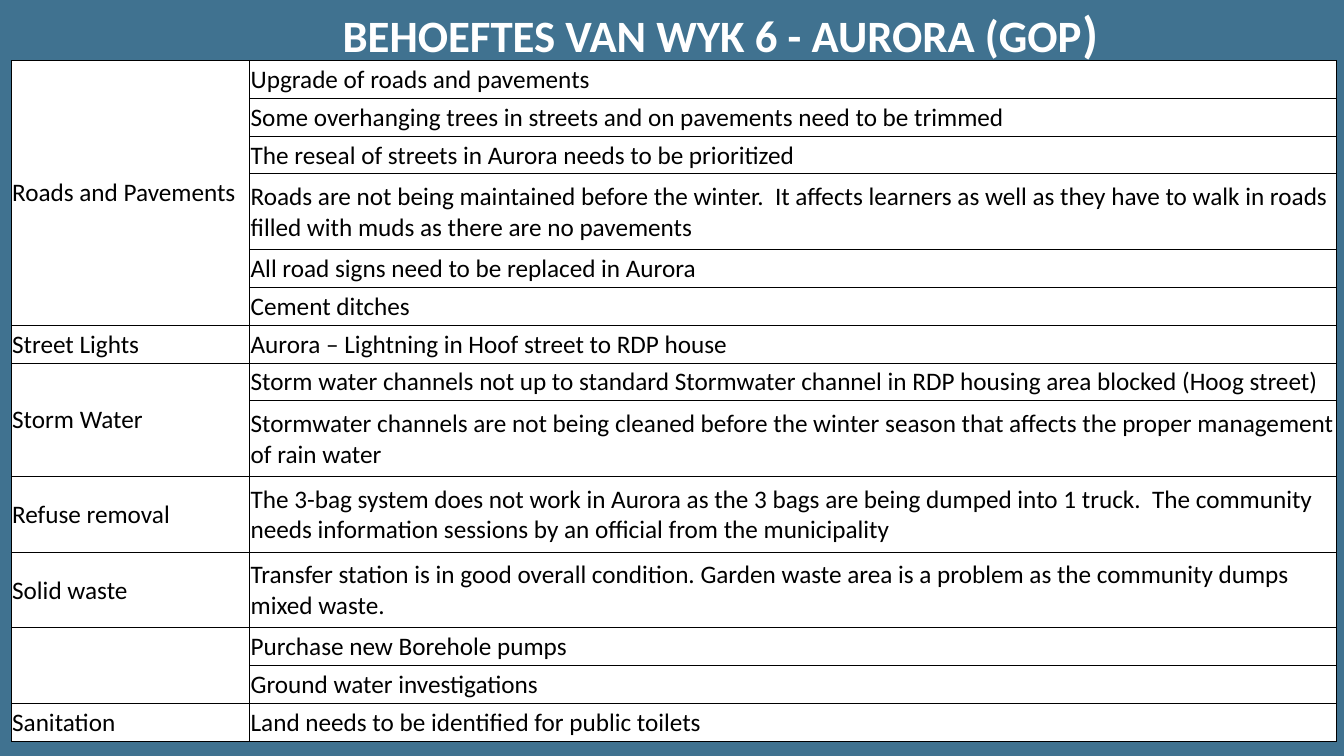
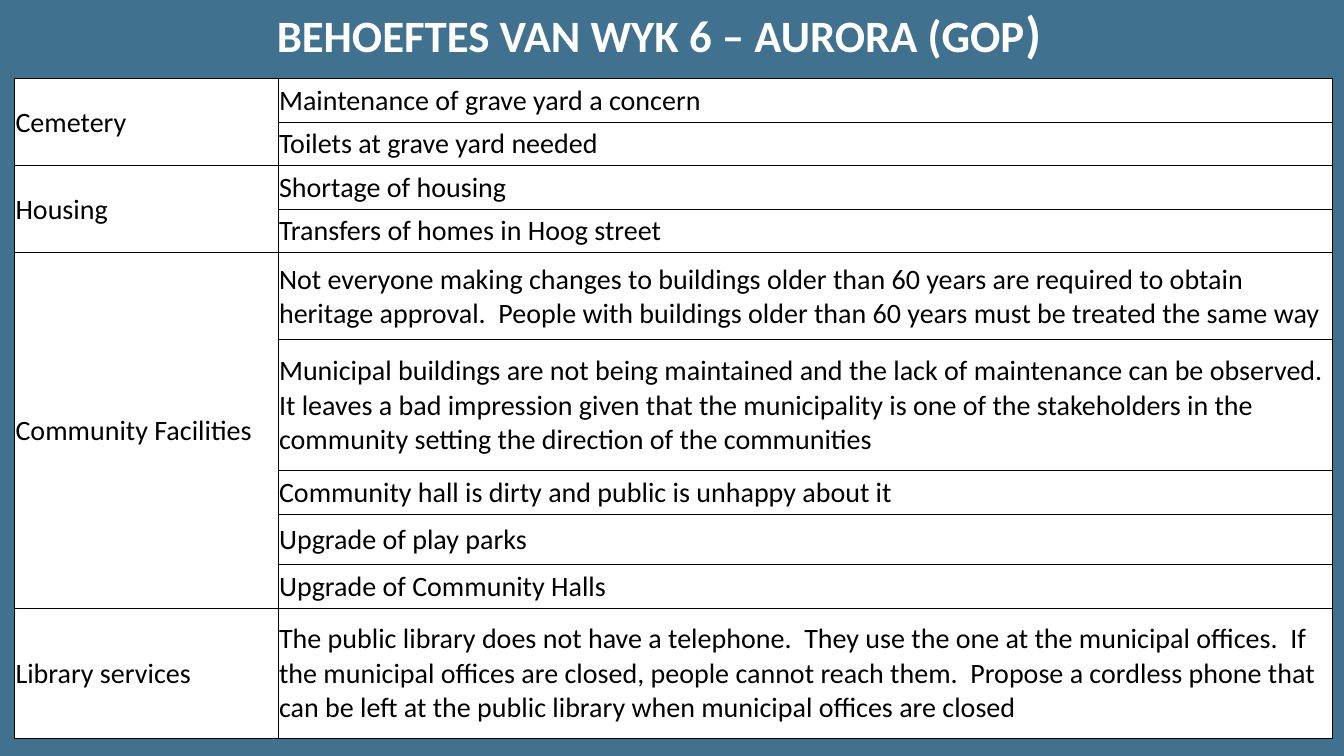
from pptx import Presentation
from pptx.dml.color import RGBColor
from pptx.enum.text import MSO_ANCHOR as Anchor, MSO_AUTO_SIZE as AutoSize, PP_ALIGN as Align
from pptx.oxml import parse_xml
from pptx.oxml.ns import nsdecls
from pptx.util import Inches, Pt

BACK, WHITE, BLACK = "407290", "FFFFFF", "000000"
FONT = "Calibri"
BORDER = (
    '<a:{side} {ns} w="6350"><a:solidFill><a:srgbClr val="{color}"/></a:solidFill></a:{side}>'
)


def rgb(value):
    return RGBColor.from_string(value)


def style(font, color, bold=False):
    font.name, font.bold = FONT, bold
    font.color.rgb = rgb(color)


# Content: each group is (heading, [(need, height in lines), ...]);
# title and table boxes are percentages of the slide's width and height
slides = [
    dict(
        title="BEHOEFTES VAN WYK 6 - AURORA (GOP",
        title_box=(23.03, 61.14),
        table_box=(0.83, 7.98, 98.6, 90.13),
        heading_share=0.18,
        size=18,
        groups=[
            ("Roads and Pavements", [
                ("Upgrade of roads and pavements", 1),
                ("Some overhanging trees in streets and on pavements need to be trimmed", 1),
                ("The reseal of streets in Aurora needs to be prioritized", 1),
                ("Roads are not being maintained before the winter.  It affects learners as well "
                 "as they have to walk in roads filled with muds as there are no pavements", 2),
                ("All road signs need to be replaced in Aurora", 1),
                ("Cement ditches", 1),
            ]),
            ("Street Lights", [("Aurora – Lightning in Hoof street to RDP house", 1)]),
            ("Storm Water", [
                ("Storm water channels not up to standard Stormwater channel in RDP housing "
                 "area blocked (Hoog street)", 1),
                ("Stormwater channels are not being cleaned before the winter season that "
                 "affects the proper management of rain water", 2),
            ]),
            ("Refuse removal", [
                ("The 3-bag system does not work in Aurora as the 3 bags are being dumped into "
                 "1 truck.  The community needs information sessions by an official from the "
                 "municipality", 2),
            ]),
            ("Solid waste", [
                ("Transfer station is in good overall condition. Garden waste area is a problem "
                 "as the community dumps mixed waste.", 2),
            ]),
            ("", [("Purchase new Borehole pumps", 1), ("Ground water investigations", 1)]),
            ("Sanitation", [("Land needs to be identified for public toilets", 1)]),
        ],
    ),
    dict(
        title="BEHOEFTES VAN WYK 6 – AURORA (GOP",
        title_box=(0, 98.05),
        table_box=(1.08, 10.38, 98.05, 87.33),
        heading_share=0.2,
        size=20,
        groups=[
            ("Cemetery", [
                ("Maintenance of grave yard a concern", 1),
                ("Toilets at grave yard needed", 1),
            ]),
            ("Housing", [
                ("Shortage of housing", 1),
                ("Transfers of homes in Hoog street", 1),
            ]),
            ("Community Facilities", [
                ("Not everyone making changes to buildings older than 60 years are required to "
                 "obtain heritage approval.  People with buildings older than 60 years must be "
                 "treated the same way", 2),
                ("Municipal buildings are not being maintained and the lack of maintenance can "
                 "be observed.  It leaves a bad impression given that the municipality is one of "
                 "the stakeholders in the community setting the direction of the communities", 3),
                ("Community hall is dirty and public is unhappy about it", 1),
                ("Upgrade of play parks", 1.16),
                ("Upgrade of Community Halls", 1),
            ]),
            ("Library services", [
                ("The public library does not have a telephone.  They use the one at the "
                 "municipal offices.  If the municipal offices are closed, people cannot reach "
                 "them.  Propose a cordless phone that can be left at the public library when "
                 "municipal offices are closed", 3),
            ]),
        ],
    ),
]

# Shared page and background
prs = Presentation()
prs.slide_width, prs.slide_height = Inches(13.33), Inches(7.5)
col, row = prs.slide_width / 100, prs.slide_height / 100
fill = prs.slide_master.background.fill
fill.solid()
fill.fore_color.rgb = rgb(BACK)

for page in slides:
    s = prs.slides.add_slide(prs.slide_layouts[5])

    # Title, with a larger closing bracket, kept clear of the table
    sp = s.shapes.title
    left, width = page["title_box"]
    sp.left, sp.top = int(left * col), 0
    sp.width, sp.height = int(width * col), int(8.6 * row)
    tf = sp.text_frame
    tf.auto_size, tf.word_wrap, tf.vertical_anchor = AutoSize.NONE, True, Anchor.MIDDLE
    tf.margin_top = tf.margin_bottom = 0
    p = tf.paragraphs[0]
    p.alignment = Align.CENTER
    style(p.font, WHITE, bold=True)
    for text, size in ((page["title"], 32), (")", 36)):
        r = p.add_run()
        r.text, r.font.size = text, Pt(size)

    # Table grid: row heights follow the line counts
    needs = [need for _, group in page["groups"] for need in group]
    left, top, width, height = page["table_box"]
    width, height = int(width * col), int(height * row)
    table = s.shapes.add_table(
        len(needs), 2, int(left * col), int(top * row), width, height).table
    table.first_row = table.horz_banding = False
    table.columns[0].width = int(width * page["heading_share"])
    table.columns[1].width = width - table.columns[0].width
    line = height / sum(lines for _, lines in needs)
    for i, (text, lines) in enumerate(needs):
        table.rows[i].height = int(lines * line)
        table.cell(i, 1).text = text

    # Headings span the rows of their group
    first = 0
    for heading, group in page["groups"]:
        cell = table.cell(first, 0)
        cell.text = heading
        if len(group) > 1:
            cell.merge(table.cell(first + len(group) - 1, 0))
        first += len(group)

    # Cell borders, fill and text
    for cell in table.iter_cells():
        cell.vertical_anchor = Anchor.MIDDLE
        cell.margin_left = cell.margin_right = cell.margin_top = Inches(0.01)
        cell.margin_bottom = 0
        tc_pr = cell._tc.get_or_add_tcPr()
        for side in ("lnL", "lnR", "lnT", "lnB"):
            tc_pr.append(parse_xml(BORDER.format(side=side, ns=nsdecls("a"), color=BLACK)))
        cell.fill.solid()
        cell.fill.fore_color.rgb = rgb(WHITE)
        p = cell.text_frame.paragraphs[0]
        style(p.font, BLACK)
        p.font.size = Pt(page["size"])

prs.save("out.pptx")
